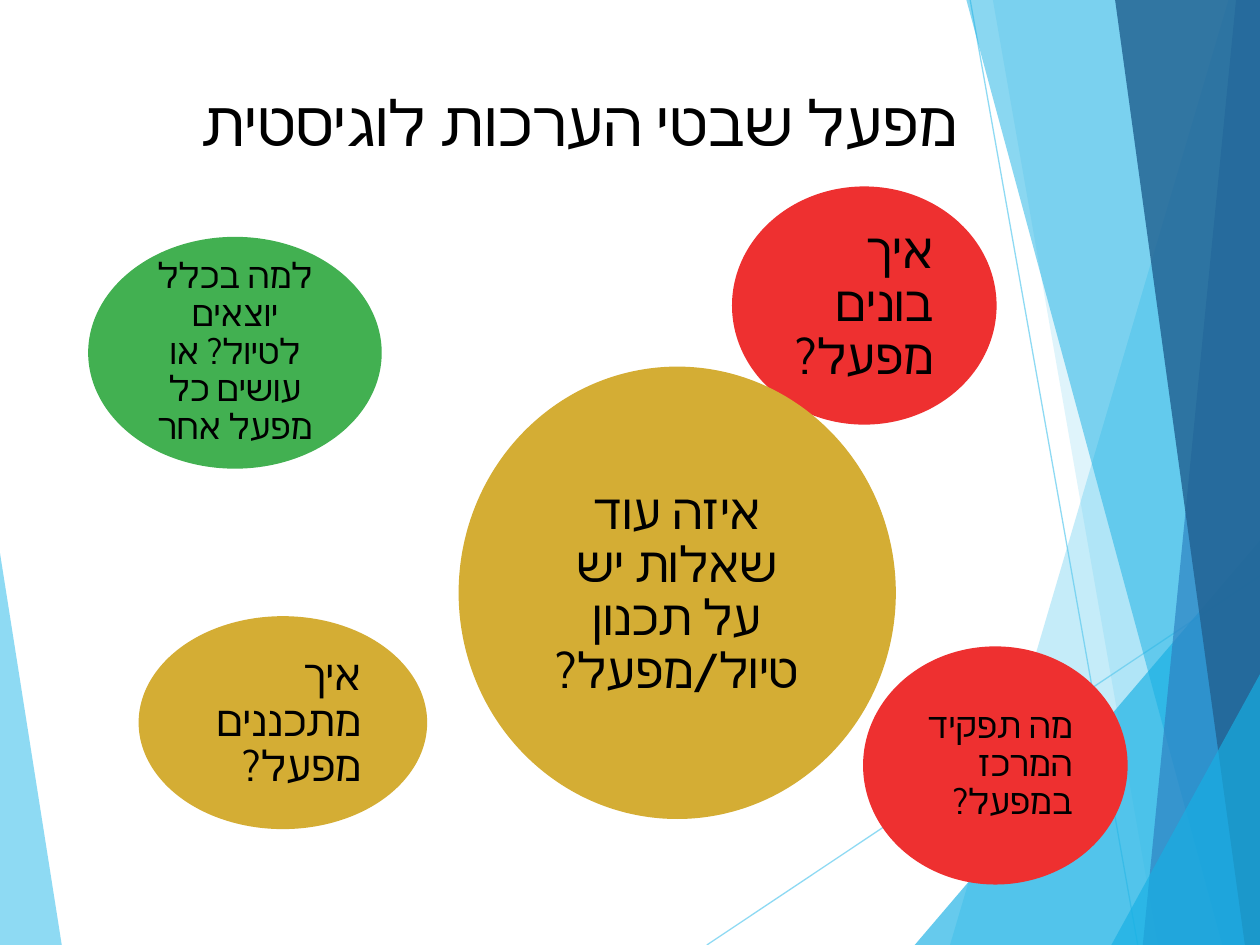
import pptx
import pptx.dml.color
import pptx.enum.shapes
import pptx.enum.text
import pptx.oxml.ns
import pptx.util
from lxml import etree

Inches = pptx.util.Inches
RGBColor = pptx.dml.color.RGBColor
ALIGN = pptx.enum.text.PP_ALIGN
ANCHOR = pptx.enum.text.MSO_ANCHOR

BLACK = RGBColor(0x00, 0x00, 0x00)
SKY = RGBColor(0x5F, 0xCB, 0xEF)
CYAN = RGBColor(0x17, 0xB0, 0xE4)
BLUE = RGBColor(0x2E, 0x83, 0xC3)
NAVY = RGBColor(0x22, 0x62, 0x92)
GREEN = RGBColor(0x42, 0xB0, 0x51)
GOLD = RGBColor(0xD4, 0xAD, 0x34)
RED = RGBColor(0xEE, 0x30, 0x30)

FONT = "Cabin"
SLIDE_BOX = (0, 0, 10, 7.5)
TITLE_BOX = (0.67, 0.61, 7.86, 1.5)

RAYS = [((5.61, 7.5), (10, 4.57)), ((7.7, 0), (9.03, 7.5))]
FACETS = [
    ([(0, 4.39), (0.49, 7.5), (0, 7.5)], SKY, 70),
    ([(9.75, 0), (7.54, 7.5), (10, 7.5), (10, 0)], SKY, 36),
    ([(7.88, 0), (9.19, 7.5), (10, 7.5), (10, 0)], SKY, 20),
    ([(7.26, 7.5), (10, 4.29), (10, 7.5)], CYAN, 66),
    ([(7.67, 0), (9.7, 7.5), (10, 7.5), (10, 0)], CYAN, 50),
    ([(9.81, 0), (9.07, 7.5), (10, 7.5), (10, 0)], BLUE, 70),
    ([(8.85, 0), (9.88, 7.5), (10, 7.5), (10, 0)], NAVY, 82),
    ([(8.82, 7.5), (10, 5.35), (10, 7.5)], CYAN, 66),
]
BUBBLES = [
    ((0.7, 1.88, 2.33, 1.84), GREEN, "למה בכלל יוצאים לטיול? או עושים כל מפעל אחר", 20, ALIGN.CENTER, 0.19),
    ((1.1, 4.89, 2.29, 1.69), GOLD, "איך מתכננים מפעל?", 24, ALIGN.RIGHT, 0.19),
    ((5.81, 1.48, 2.1, 1.89), RED, "איך בונים מפעל?", 28, ALIGN.RIGHT, 0.19),
    ((6.85, 5.13, 2.1, 1.89), RED, "מה תפקיד המרכז במפעל?", 20, ALIGN.RIGHT, 0.13),
    ((3.64, 2.91, 3.47, 3.59), GOLD, "איזה עוד שאלות יש על תכנון טיול/מפעל?", 28, ALIGN.CENTER, 0.19),
]


def set_alpha(sp, percent):
    """Make every solid colour of a shape or connector partly transparent."""
    for clr in sp._element.spPr.iter(pptx.oxml.ns.qn("a:srgbClr")):
        etree.SubElement(clr, pptx.oxml.ns.qn("a:alpha"), val=str(percent * 1000))


def set_text(tf, text, size, align):
    """Write one right-to-left paragraph into a text frame."""
    tf.word_wrap = True
    tf.auto_size = pptx.enum.text.MSO_AUTO_SIZE.NONE
    p = tf.paragraphs[0]
    p.text = text
    p.alignment = align
    p.font.size = pptx.util.Pt(size)
    p.font.name = FONT
    p.font.color.rgb = BLACK
    pPr = p._p.get_or_add_pPr()
    pPr.set("rtl", "1")
    etree.SubElement(p.font._rPr, pptx.oxml.ns.qn("a:cs"), typeface=FONT)
    return p


def add_facet(slide, box, points, color, alpha):
    """Draw one translucent polygon with points relative to the box."""
    pts = [(Inches(box[0] + x), Inches(box[1] + y)) for x, y in points]
    fb = slide.shapes.build_freeform(*pts[0])
    fb.add_line_segments(pts[1:], close=True)
    sp = fb.convert_to_shape()
    sp.shadow.inherit = False
    sp.fill.solid()
    sp.fill.fore_color.rgb = color
    sp.line.fill.background()
    set_alpha(sp, alpha)


def add_ray(slide, box, start, end):
    """Draw one thin translucent line with ends relative to the box."""
    ends = [Inches(box[i] + pt[i]) for pt in (start, end) for i in (0, 1)]
    cxn = slide.shapes.add_connector(pptx.enum.shapes.MSO_CONNECTOR.STRAIGHT, *ends)
    cxn.line.color.rgb = SKY
    cxn.line.width = pptx.util.Pt(0.75)
    set_alpha(cxn, 70)
    etree.SubElement(cxn._element.spPr, pptx.oxml.ns.qn("a:effectLst"))


def add_backdrop(slide, box):
    """Draw the faceted decoration along the edges of the box."""
    add_facet(slide, box, *FACETS[0])
    for start, end in RAYS:
        add_ray(slide, box, start, end)
    for facet in FACETS[1:]:
        add_facet(slide, box, *facet)


def add_title(slide, box):
    """Place and format the title placeholder."""
    sp = slide.shapes.title
    sp.left, sp.top, sp.width, sp.height = map(Inches, box)
    sp.text_frame.vertical_anchor = ANCHOR.TOP
    set_text(sp.text_frame, "מפעל שבטי הערכות לוגיסטית", 36, ALIGN.CENTER)


def add_bubble(slide, box, color, text, size, align, inset):
    """Draw one filled ellipse holding a question."""
    sp = slide.shapes.add_shape(pptx.enum.shapes.MSO_SHAPE.OVAL, *map(Inches, box))
    sp.shadow.inherit = False
    sp.fill.solid()
    sp.fill.fore_color.rgb = color
    sp.line.fill.background()
    tf = sp.text_frame
    tf.margin_left = tf.margin_right = Inches(inset)
    tf.margin_top = tf.margin_bottom = Inches(0.04)
    tf.vertical_anchor = ANCHOR.MIDDLE
    set_text(tf, text, size, align).line_spacing = 0.9


def main():
    """Build the slide and save it."""
    prs = pptx.Presentation()
    prs.slide_width, prs.slide_height = Inches(10), Inches(7.5)
    slide = prs.slides.add_slide(prs.slide_layouts[5])
    add_backdrop(slide, SLIDE_BOX)
    add_title(slide, TITLE_BOX)
    for bubble in BUBBLES:
        add_bubble(slide, *bubble)
    prs.save("out.pptx")


if __name__ == "__main__":
    main()
